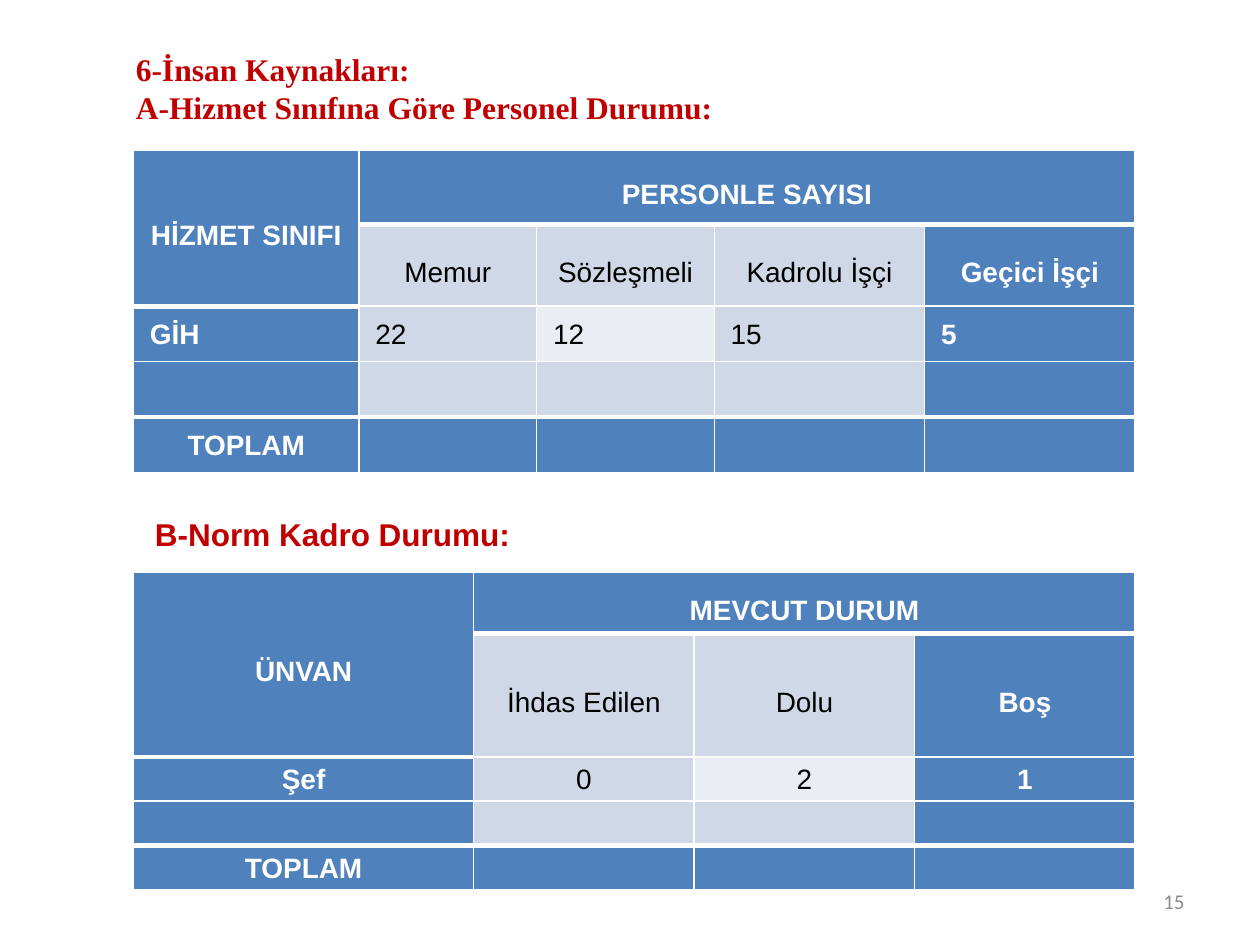
"""Build the staffing slide: two headings, two personnel tables and a page number."""
from dataclasses import dataclass

from lxml.etree import SubElement
from pptx import Presentation
from pptx.dml.color import RGBColor as Color
from pptx.enum.text import MSO_ANCHOR as Anchor, PP_ALIGN as Align
from pptx.oxml.ns import qn
from pptx.util import Inches, Pt


@dataclass(frozen=True)
class Theme:
    accent: str = "4F81BD"
    light: str = "D0D8E8"
    pale: str = "E9EDF4"
    white: str = "FFFFFF"
    black: str = "000000"
    red: str = "C00000"
    grey: str = "8C8C8C"
    sans: str = "Arial"
    serif: str = "Times New Roman"
    page_font: str = "Calibri"
    heading_size: int = 18
    cell_size: int = 16
    page_size: int = 12
    thin: int = 1
    thick: int = 3


theme = Theme()
presentation = Presentation()
presentation.slide_width, presentation.slide_height = Inches(10), Inches(7.5)
column_unit = presentation.slide_width / 100
row_unit = presentation.slide_height / 100
slide = presentation.slides.add_slide(presentation.slide_layouts[6])


def style_paragraph(paragraph, text, font_name, size, color, bold, align):
    paragraph.text = text
    paragraph.alignment = align
    paragraph.font.name = font_name
    paragraph.font.size = Pt(size)
    paragraph.font.bold = bold
    paragraph.font.color.rgb = Color.from_string(color)


def add_border(cell, side, points):
    line = SubElement(cell._tc.get_or_add_tcPr(), qn(f"a:{side}"), w=str(Pt(points)))
    fill = SubElement(line, qn("a:solidFill"))
    SubElement(fill, qn("a:srgbClr"), val=theme.white)


text_boxes = [
    (9.8, 3.87, 76.4, 10.8, 1, ["6-İnsan Kaynakları:", "A-Hizmet Sınıfına Göre Personel Durumu:"],
     theme.serif, theme.heading_size, theme.red, True, Align.LEFT),
    (10.6, 53.87, 70.1, 5.33, 1.7, ["B-Norm Kadro Durumu:"],
     theme.sans, theme.heading_size, theme.red, True, Align.LEFT),
    (71.7, 92.67, 23.3, 5.33, 1, ["15"],
     theme.page_font, theme.page_size, theme.grey, False, Align.RIGHT),
]
for left, top, width, height, inset, lines, *style in text_boxes:
    box = slide.shapes.add_textbox(int(left * column_unit), int(top * row_unit),
                                   int(width * column_unit), int(height * row_unit))
    frame = box.text_frame
    frame.word_wrap = True
    frame.vertical_anchor = Anchor.MIDDLE
    frame.margin_left = int(inset * column_unit)
    for index, line in enumerate(lines):
        paragraph = frame.paragraphs[0] if index == 0 else frame.add_paragraph()
        style_paragraph(paragraph, line, *style)

tables = [
    (15.87, [17.9, 14.1, 14.1, 16.7, 16.7], [7.87, 8.67, 5.87, 5.87, 5.87], Align.LEFT,
     [["HİZMET SINIFI", "PERSONLE SAYISI"],
      ["", "Memur", "Sözleşmeli", "Kadrolu İşçi", "Geçici İşçi"],
      ["GİH", "22", "12", "15", "5"], [], ["TOPLAM"]]),
    (60.53, [27, 17.5, 17.5, 17.5], [6.53, 13.07, 4.67, 4.67, 4.67], Align.CENTER,
     [["ÜNVAN", "MEVCUT DURUM"],
      ["", "İhdas Edilen", "Dolu", "Boş"],
      ["Şef", "0", "2", "1"], [], ["TOPLAM"]]),
]
for top, widths, heights, value_align, texts in tables:
    table = slide.shapes.add_table(len(heights), len(widths), int(10.6 * column_unit), int(top * row_unit),
                                   int(sum(widths) * column_unit), int(sum(heights) * row_unit)).table
    for column, width in zip(table.columns, widths):
        column.width = int(width * column_unit)
    for row, height in zip(table.rows, heights):
        row.height = int(height * row_unit)
    last_row, last_column = len(heights) - 1, len(widths) - 1
    table.cell(0, 0).merge(table.cell(1, 0))
    table.cell(0, 1).merge(table.cell(0, last_column))

    for r in range(last_row + 1):
        for c in range(last_column + 1):
            cell = table.cell(r, c)
            accented = r in (0, last_row) or c in (0, last_column)
            is_value = r == 2
            indented = is_value and value_align == Align.LEFT
            cell.vertical_anchor = Anchor.MIDDLE
            cell.margin_left = int((1.3 if indented else 0.7) * column_unit)
            cell.margin_right = int(0.7 * column_unit)
            cell.margin_top = cell.margin_bottom = 0

            heavy_edges = (2 if c == 0 else 1, last_row)
            bottom_edge = r + (cell.span_height if cell.is_merge_origin else 1)
            add_border(cell, "lnL", theme.thin)
            add_border(cell, "lnR", theme.thin)
            add_border(cell, "lnT", theme.thick if r in heavy_edges else theme.thin)
            add_border(cell, "lnB", theme.thick if bottom_edge in heavy_edges else theme.thin)
            cell.fill.solid()
            shade = theme.accent if accented else theme.pale if is_value and c == 2 else theme.light
            cell.fill.fore_color.rgb = Color.from_string(shade)

            paragraph = cell.text_frame.paragraphs[0]
            text = texts[r][c] if c < len(texts[r]) else ""
            style_paragraph(paragraph, text, theme.sans, theme.cell_size,
                            theme.white if accented else theme.black, accented,
                            value_align if is_value else Align.CENTER)
            if text:
                paragraph.line_spacing = 1.5 if r < 2 else 1.07
                paragraph.space_after = Pt(10 if r < 2 else 0)

presentation.save("out.pptx")
